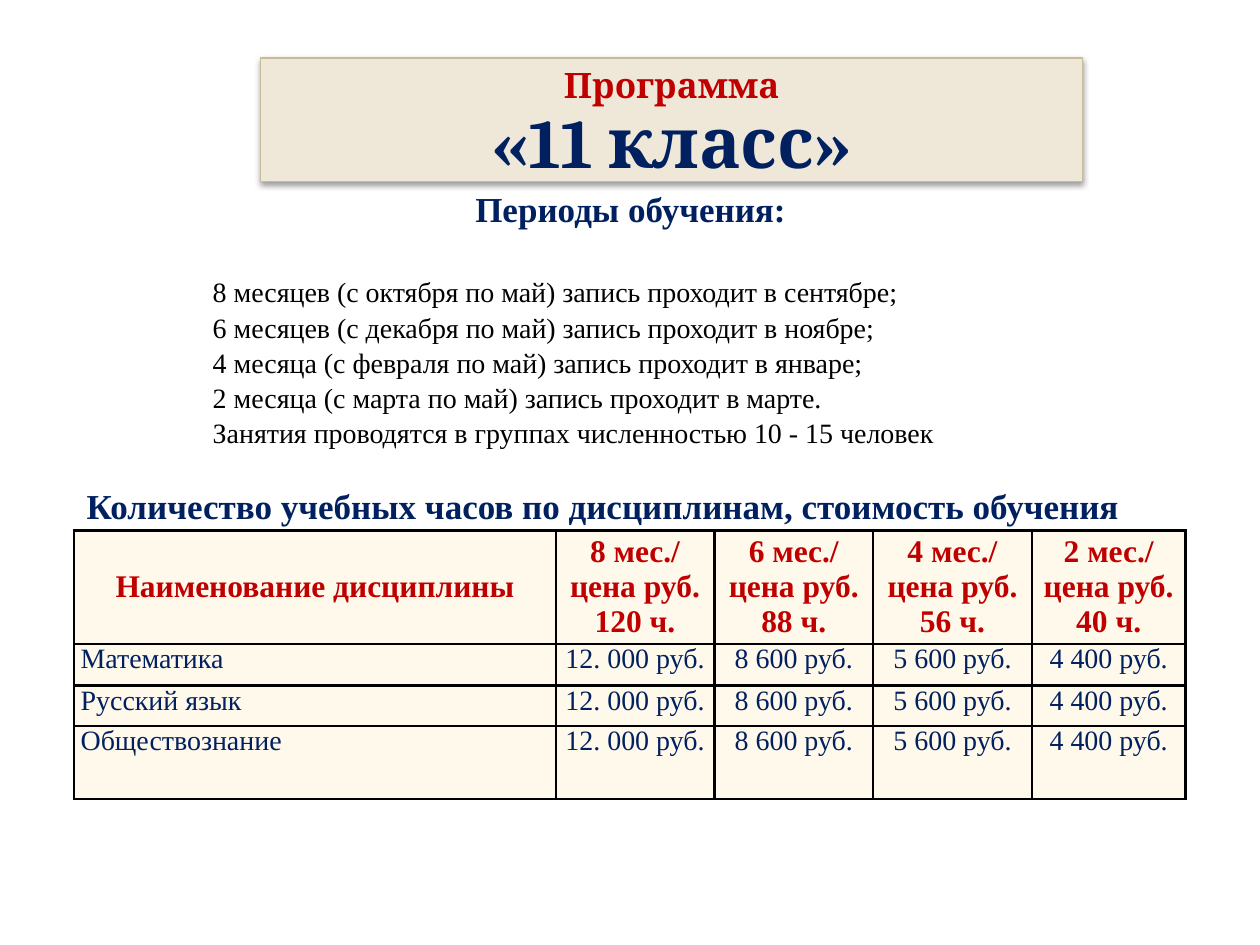
from typing import NamedTuple

from lxml import etree
from pptx import Presentation
from pptx.dml.color import RGBColor
from pptx.enum.text import MSO_ANCHOR, MSO_AUTO_SIZE, PP_ALIGN
from pptx.oxml import parse_xml
from pptx.oxml.ns import qn
from pptx.util import Inches, Pt

LEFT, MID = PP_ALIGN.LEFT, PP_ALIGN.CENTER
CENTER_V, TOP_V = MSO_ANCHOR.MIDDLE, MSO_ANCHOR.TOP
FIXED = MSO_AUTO_SIZE.NONE
HEAD, BODY = "Cambria", "Times New Roman"
COLORS = {
    "red": "C00000", "navy": "002060", "black": "000000",
    "sand": "EFE8D9", "edge": "C4BD97", "cream": "FFF9EB",
}
SHADOW = """<a:effectLst
    xmlns:a="http://schemas.openxmlformats.org/drawingml/2006/main">
  <a:outerShdw blurRad="39370" dist="20320" dir="5400000" rotWithShape="0">
    <a:srgbClr val="000000"><a:alpha val="38000"/></a:srgbClr>
  </a:outerShdw></a:effectLst>"""


class Style(NamedTuple):
    size: int
    color: str
    bold: bool = False
    font: str = BODY
    align: PP_ALIGN = MID
    spacing: float = 1.0
    indent: float = 0


class Line(NamedTuple):
    text: str
    style: Style
    before: int = 0


TITLE_TOP = Style(20, "red", True, HEAD, spacing=0.92)
TITLE_MAIN = Style(40, "navy", True, HEAD, spacing=0.92)
PERIOD = Style(20, "navy", True)
HOURS = Style(20, "navy", True, align=LEFT)
ITEM = Style(16, "black", align=LEFT, spacing=1.05, indent=1)
COL_HEAD = Style(18, "red", True)
SUBJECT = Style(16, "navy", align=LEFT)
PRICE = Style(16, "navy")

TITLE = [Line("Программа", TITLE_TOP), Line("«11 класс»", TITLE_MAIN)]
PERIODS = [
    Line("Периоды обучения:", PERIOD),
    Line("8 месяцев (с октября по май) запись проходит в сентябре;", ITEM, 25),
    Line("6 месяцев (с декабря по май) запись проходит в ноябре;", ITEM),
    Line("4 месяца (с февраля по май) запись проходит в январе;", ITEM),
    Line("2 месяца (с марта по май) запись проходит в марте.", ITEM),
    Line("Занятия проводятся в группах численностью 10 - 15 человек", ITEM),
    Line("Количество учебных часов по дисциплинам, стоимость обучения",
         HOURS, 20),
]
TERMS = [(8, 120), (6, 88), (4, 56), (2, 40)]
SUBJECTS = ["Математика", "Русский язык", "Обществознание"]
PRICES = ["12. 000 руб.", "8 600 руб.", "5 600 руб.", "4 400 руб."]
WIDTHS = [3.82, 1.26, 1.26, 1.26, 1.22]
HEIGHTS = [0.9, 0.33, 0.32, 0.58]


def rgb(name: str) -> RGBColor:
    return RGBColor.from_string(COLORS[name])


def write(frame, lines: list[Line]) -> None:
    for i, line in enumerate(lines):
        para = frame.add_paragraph() if i else frame.paragraphs[0]
        style = line.style
        para.text = line.text
        para.alignment = style.align
        para.line_spacing = style.spacing
        para.space_before = Pt(line.before)
        para.space_after = Pt(0)
        if style.indent:
            para._p.get_or_add_pPr().set("marL", str(Inches(style.indent)))
        font = para.font
        font.name, font.size, font.bold = style.font, Pt(style.size), style.bold
        font.color.rgb = rgb(style.color)


def add_title(slide) -> None:
    title = slide.shapes.title
    title.left, title.top = Inches(2.07), Inches(0.46)
    title.width, title.height = Inches(6.52), Inches(0.98)
    title.fill.solid()
    title.fill.fore_color.rgb = rgb("sand")
    title.line.color.rgb = rgb("edge")
    title.line.width = Pt(0.75)
    title._element.spPr.append(parse_xml(SHADOW))
    frame = title.text_frame
    frame.auto_size = FIXED
    frame.vertical_anchor = CENTER_V
    frame.margin_top, frame.margin_bottom = Inches(0.1), 0
    write(frame, TITLE)


def add_periods(slide) -> None:
    box = slide.shapes.add_textbox(
        Inches(0.59), Inches(1.44), Inches(8.83), Inches(5.76))
    box.text_frame.word_wrap = True
    write(box.text_frame, PERIODS)


def add_borders(cell) -> None:
    props = cell._tc.get_or_add_tcPr()
    for i, side in enumerate(("lnL", "lnR", "lnT", "lnB")):
        edge = etree.Element(qn(f"a:{side}"), w=str(Pt(1.5)))
        fill = etree.SubElement(edge, qn("a:solidFill"))
        etree.SubElement(fill, qn("a:srgbClr"), val=COLORS["black"])
        props.insert(i, edge)


def fill_cell(cell, lines: list[Line], anchor: MSO_ANCHOR) -> None:
    cell.margin_left = cell.margin_right = Inches(0.05)
    cell.margin_top = cell.margin_bottom = 0
    cell.vertical_anchor = anchor
    cell.fill.solid()
    cell.fill.fore_color.rgb = rgb("cream")
    write(cell.text_frame, lines)
    add_borders(cell)


def add_prices(slide) -> None:
    table = slide.shapes.add_table(
        len(HEIGHTS), len(WIDTHS), Inches(0.59), Inches(4.21),
        Inches(sum(WIDTHS)), Inches(sum(HEIGHTS))).table
    for col, width in zip(table.columns, WIDTHS):
        col.width = Inches(width)
    for row, height in zip(table.rows, HEIGHTS):
        row.height = Inches(height)

    heads = [[Line("Наименование дисциплины", COL_HEAD)]]
    heads += [[Line(f"{months} мес./ цена руб.", COL_HEAD),
               Line(f"{hours} ч.", COL_HEAD)] for months, hours in TERMS]
    rows = [heads]
    for name in SUBJECTS:
        rows.append([[Line(name, SUBJECT)]]
                    + [[Line(price, PRICE)] for price in PRICES])
    for r, row in enumerate(rows):
        for c, lines in enumerate(row):
            fill_cell(table.cell(r, c), lines, TOP_V if r else CENTER_V)


def main() -> None:
    deck = Presentation()
    deck.slide_width, deck.slide_height = Inches(10), Inches(7.5)
    slide = deck.slides.add_slide(deck.slide_layouts[5])
    add_title(slide)
    add_periods(slide)
    add_prices(slide)
    deck.save("out.pptx")


if __name__ == "__main__":
    main()
